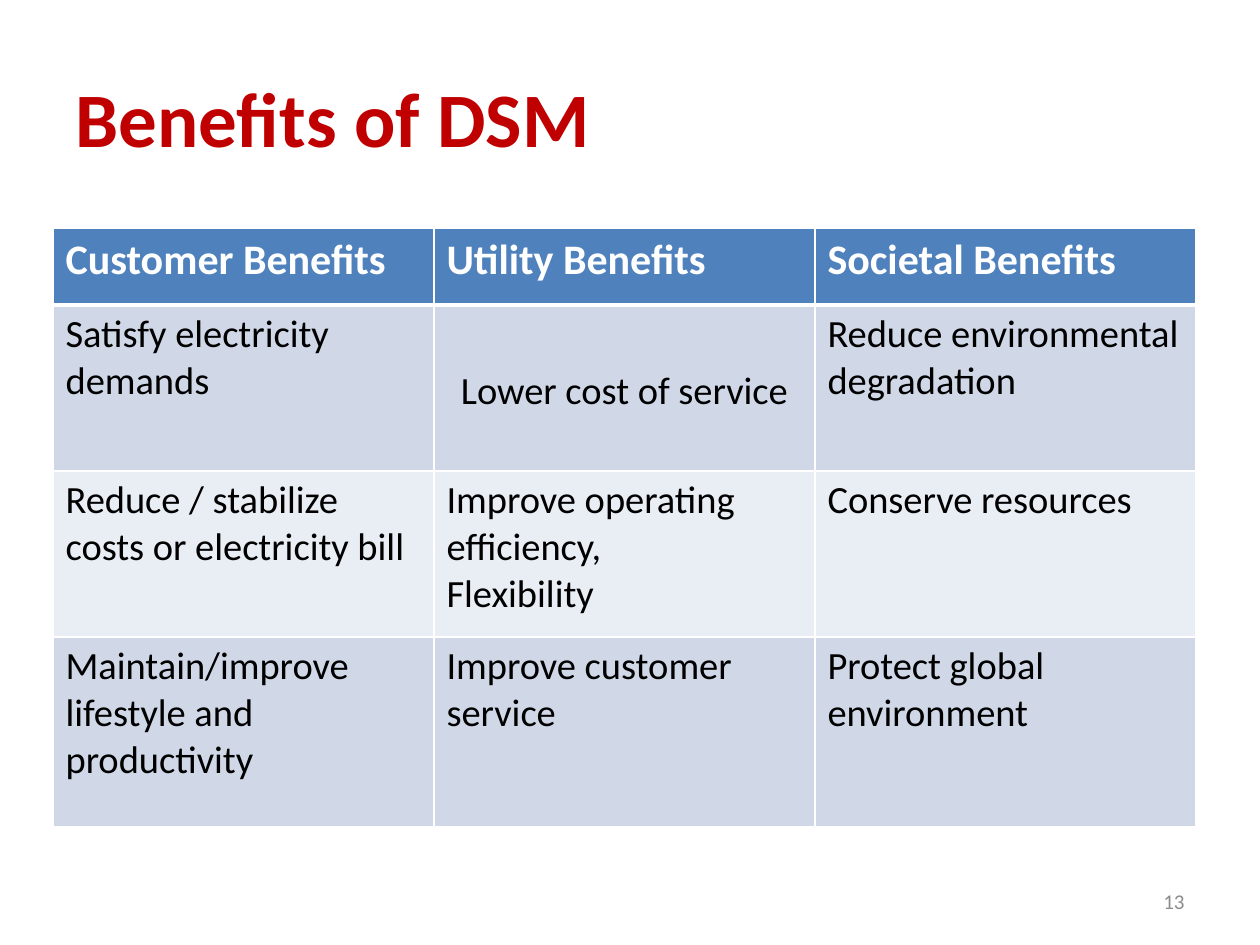
from lxml.etree import SubElement
from pptx import Presentation
from pptx.dml.color import RGBColor
from pptx.enum.text import MSO_ANCHOR as Anchor, PP_ALIGN as Align
from pptx.oxml.ns import qn
from pptx.util import Emu, Pt

TITLE = "Benefits of DSM"
PAGE_NUMBER = "13"
BENEFITS = [
    ["Customer Benefits", "Utility Benefits", "Societal Benefits"],
    ["Satisfy electricity demands", "Lower cost of service",
     "Reduce environmental degradation"],
    ["Reduce / stabilize costs or electricity bill",
     "Improve operating efficiency,\nFlexibility", "Conserve resources"],
    ["Maintain/improve lifestyle and\nproductivity",
     "Improve customer service", "Protect global environment"],
]
CENTRED_CELL = (1, 1)

RED = RGBColor(0xC0, 0x00, 0x00)
BLUE = RGBColor(0x4F, 0x81, 0xBD)
BANDS = [RGBColor(0xE9, 0xED, 0xF4), RGBColor(0xD0, 0xD8, 0xE8)]
WHITE = RGBColor(0xFF, 0xFF, 0xFF)
BLACK = RGBColor(0x00, 0x00, 0x00)
GREY = RGBColor(0x8C, 0x8C, 0x8C)

TITLE_FORMAT = {"size": Pt(44), "bold": True, "color": RED}
HEADER_FORMAT = {"size": Pt(24), "bold": True, "color": WHITE}
BODY_FORMAT = {"size": Pt(22), "bold": False, "color": BLACK}
NUMBER_FORMAT = {"size": Pt(12), "bold": False, "color": GREY}

TITLE_BOX = (63, 38, 1134, 157)
NUMBER_BOX = (903, 876, 294, 50)
TABLE_LEFT, TABLE_TOP, COLUMN_WIDTH = 53, 228, 381
ROW_HEIGHTS = [77, 166, 166, 190]


def px(length):
    return Emu(round(length * 914400 / 126))


def write(frame, text, text_format, align=Align.LEFT):
    frame.text = text
    for paragraph in frame.paragraphs:
        paragraph.alignment = align
        for run in paragraph.runs:
            run.font.name = "Calibri"
            for key, value in text_format.items():
                if key == "color":
                    run.font.color.rgb = value
                else:
                    setattr(run.font, key, value)


def add_borders(cell, bottom_width, top_width):
    properties = cell._tc.get_or_add_tcPr()
    widths = {"lnL": 1, "lnR": 1, "lnT": top_width, "lnB": bottom_width}
    for edge, width in widths.items():
        line = SubElement(properties, qn(f"a:{edge}"), w=str(Pt(width)))
        fill = SubElement(line, qn("a:solidFill"))
        SubElement(fill, qn("a:srgbClr"), val=str(WHITE))


def add_benefits(slide):
    columns = len(BENEFITS[0])
    table = slide.shapes.add_table(
        len(BENEFITS), columns, px(TABLE_LEFT), px(TABLE_TOP),
        px(COLUMN_WIDTH * columns), px(sum(ROW_HEIGHTS))).table
    for column in table.columns:
        column.width = px(COLUMN_WIDTH)
    for r, (height, benefits) in enumerate(zip(ROW_HEIGHTS, BENEFITS)):
        table.rows[r].height = px(height)
        for c, benefit in enumerate(benefits):
            cell = table.cell(r, c)
            add_borders(cell, 3 if r == 0 else 1, 3 if r == 1 else 1)
            cell.fill.solid()
            cell.fill.fore_color.rgb = BANDS[r % 2] if r else BLUE
            write(cell.text_frame, benefit, BODY_FORMAT if r else HEADER_FORMAT)

    centred = table.cell(*CENTRED_CELL)
    centred_format = {"vertical_anchor": Anchor.MIDDLE, "margin_left": px(9),
                      "margin_right": px(9), "margin_top": 0, "margin_bottom": 0}
    for key, value in centred_format.items():
        setattr(centred, key, value)
    paragraph = centred.text_frame.paragraphs[0]
    paragraph.alignment = Align.CENTER
    paragraph.line_spacing = 1.15


def main():
    deck = Presentation()
    deck.slide_width, deck.slide_height = px(1260), px(945)
    slide = deck.slides.add_slide(deck.slide_layouts[5])

    title = slide.shapes.title
    for side, length in zip(("left", "top", "width", "height"), TITLE_BOX):
        setattr(title, side, px(length))
    write(title.text_frame, TITLE, TITLE_FORMAT)
    title.text_frame.vertical_anchor = Anchor.MIDDLE

    add_benefits(slide)

    number = slide.shapes.add_textbox(*map(px, NUMBER_BOX)).text_frame
    number.word_wrap = True
    number.vertical_anchor = Anchor.MIDDLE
    write(number, PAGE_NUMBER, NUMBER_FORMAT, Align.RIGHT)

    deck.save("out.pptx")


if __name__ == "__main__":
    main()
